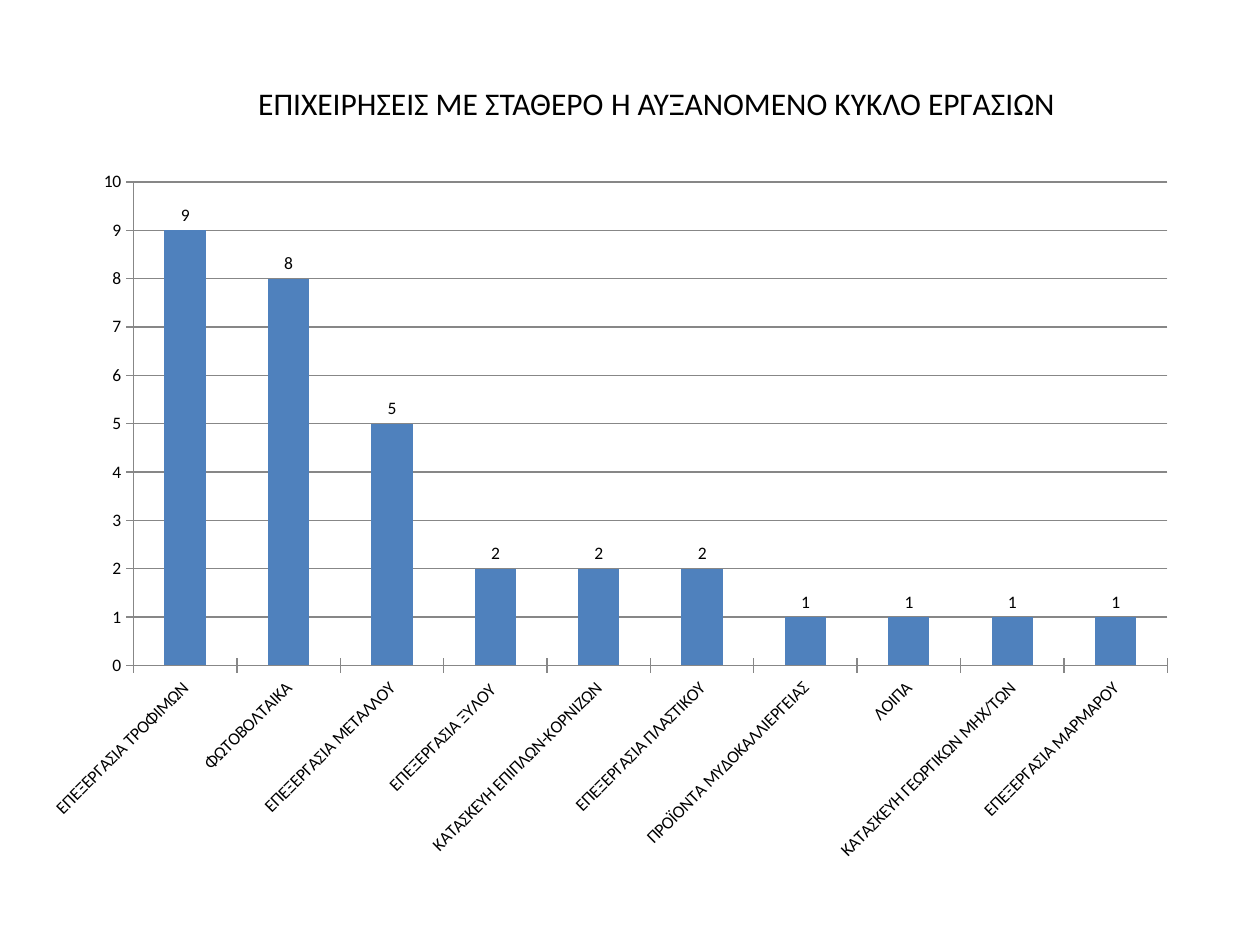
from pptx import Presentation
from pptx.chart.data import CategoryChartData
from pptx.dml.color import RGBColor
from pptx.enum.chart import XL_CHART_TYPE as ChartType, XL_LABEL_POSITION as LabelPos, XL_TICK_MARK as Tick
from pptx.enum.text import MSO_ANCHOR as Anchor, PP_ALIGN as Align
from pptx.util import Cm, Pt

COLORS = {"text": "000000", "bar": "4F81BD", "line": "878787"}
FONT = "Calibri"
TURNOVER = {
    "ΕΠΕΞΕΡΓΑΣΙΑ ΤΡΟΦΙΜΩΝ": 9,
    "ΦΩΤΟΒΟΛΤΑΙΚΑ": 8,
    "ΕΠΕΞΕΡΓΑΣΙΑ ΜΕΤΑΛΛΟΥ": 5,
    "ΕΠΕΞΕΡΓΑΣΙΑ ΞΥΛΟΥ ": 2,
    "ΚΑΤΑΣΚΕΥΗ ΕΠΙΠΛΩΝ-ΚΟΡΝΙΖΩΝ": 2,
    "ΕΠΕΞΕΡΓΑΣΙΑ ΠΛΑΣΤΙΚΟΥ": 2,
    "ΠΡΟΪΟΝΤΑ ΜΥΔΟΚΑΛΛΙΕΡΓΕΙΑΣ": 1,
    "ΛΟΙΠΑ": 1,
    "ΚΑΤΑΣΚΕΥΗ ΓΕΩΡΓΙΚΩΝ ΜΗΧ/ΤΩΝ": 1,
    "ΕΠΕΞΕΡΓΑΣΙΑ ΜΑΡΜΑΡΟΥ": 1,
}


def color(name):
    return RGBColor.from_string(COLORS[name])


def style_font(font, size):
    font.name = FONT
    font.size = Pt(size)
    font.bold = False
    font.color.rgb = color("text")


def write(frame, text, size=18, align=Align.LEFT, anchor=Anchor.MIDDLE):
    frame.word_wrap = True
    frame.vertical_anchor = anchor
    paragraph = frame.paragraphs[0]
    paragraph.alignment = align
    run = paragraph.add_run()
    run.text = text
    style_font(run.font, size)


class SlideBuilder:
    def __init__(self, slide, label_size=10):
        self.slide = slide
        self.label_size = label_size

    def title(self, text, left, top, width, height):
        heading = self.slide.shapes.title
        heading.left, heading.top = Cm(left), Cm(top)
        heading.width, heading.height = Cm(width), Cm(height)
        write(heading.text_frame, text)

    def axis_line(self, line):
        line.color.rgb = color("line")
        line.width = Pt(0.75)

    def column_chart(self, values, left, top, width, height):
        data = CategoryChartData()
        data.categories = list(values)
        data.add_series("Series 1", list(values.values()))
        chart = self.slide.shapes.add_chart(
            ChartType.COLUMN_CLUSTERED, Cm(left), Cm(top), Cm(width), Cm(height), data
        ).chart
        chart.has_title = False
        chart.has_legend = False
        style_font(chart.font, self.label_size)

        plot = chart.plots[0]
        plot.gap_width = 150
        plot.vary_by_categories = False
        bars = plot.series[0].format.fill
        bars.solid()
        bars.fore_color.rgb = color("bar")
        plot.has_data_labels = True
        plot.data_labels.show_value = True
        plot.data_labels.position = LabelPos.OUTSIDE_END
        style_font(plot.data_labels.font, self.label_size)

        for axis in (chart.category_axis, chart.value_axis):
            axis.major_tick_mark = Tick.CROSS
            axis.minor_tick_mark = Tick.NONE
            self.axis_line(axis.format.line)
            style_font(axis.tick_labels.font, self.label_size)
        chart.category_axis.has_major_gridlines = False
        label_body = chart.category_axis._element.txPr.bodyPr
        label_body.set("rot", "-2700000")
        label_body.set("vert", "horz")

        scale = chart.value_axis
        scale.minimum_scale, scale.maximum_scale, scale.major_unit = 0, 10, 1
        scale.has_major_gridlines = True
        self.axis_line(scale.major_gridlines.format.line)


def main():
    deck = Presentation()
    deck.slide_width, deck.slide_height = Cm(25.4), Cm(19.05)
    builder = SlideBuilder(deck.slides.add_slide(deck.slide_layouts[5]))
    builder.column_chart(TURNOVER, 0.58, 3.18, 23.42, 14.45)
    builder.title("ΕΠΙΧΕΙΡΗΣΕΙΣ ΜΕ ΣΤΑΘΕΡΟ Ή ΑΥΞΑΝΟΜΕΝΟ ΚΥΚΛΟ ΕΡΓΑΣΙΩΝ", 4.95, 1.57, 16.66, 1.02)
    deck.save("out.pptx")


if __name__ == "__main__":
    main()
